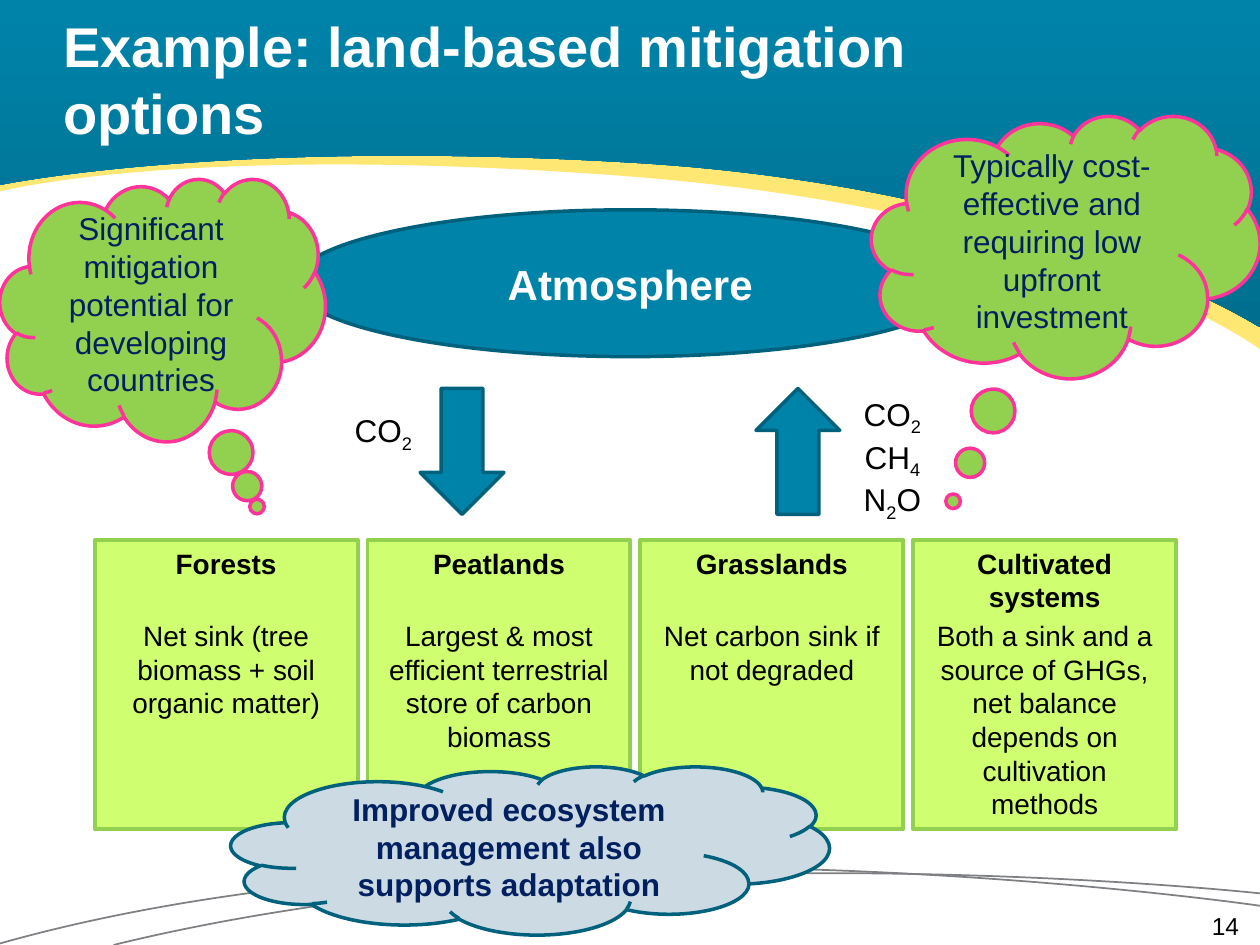
"""Build a slide on land-based mitigation options."""
from lxml import etree
from pptx import Presentation
from pptx.dml.color import RGBColor
from pptx.enum.shapes import MSO_SHAPE
from pptx.enum.text import MSO_ANCHOR, MSO_AUTO_SIZE, PP_ALIGN
from pptx.oxml.ns import qn
from pptx.util import Cm, Pt

RECTANGLE, ELLIPSE = MSO_SHAPE.RECTANGLE, MSO_SHAPE.OVAL
ARROW, CLOUD, CALLOUT = MSO_SHAPE.DOWN_ARROW, MSO_SHAPE.CLOUD, MSO_SHAPE.CLOUD_CALLOUT
TOP, MIDDLE = MSO_ANCHOR.TOP, MSO_ANCHOR.MIDDLE
LEFT, CENTER, RIGHT = PP_ALIGN.LEFT, PP_ALIGN.CENTER, PP_ALIGN.RIGHT
NO_AUTOSIZE = MSO_AUTO_SIZE.NONE

WHITE = RGBColor(0xFF, 0xFF, 0xFF)
BLACK = RGBColor(0x00, 0x00, 0x00)
GRAY = RGBColor(0x7E, 0x80, 0x83)
YELLOW = RGBColor(0xFF, 0xE7, 0x74)
TEAL = RGBColor(0x00, 0x83, 0xA9)
DARK_TEAL = RGBColor(0x00, 0x61, 0x7D)
LIME = RGBColor(0xCF, 0xFF, 0x70)
GREEN = RGBColor(0x92, 0xD0, 0x50)
PINK = RGBColor(0xFF, 0x33, 0x99)
PALE_BLUE = RGBColor(0xCC, 0xDA, 0xE3)
NAVY = RGBColor(0x00, 0x20, 0x60)

SLIDE_WIDTH, SLIDE_HEIGHT = 25.4, 19.05
HEADER_TOP = -0.03


class SlideBuilder:
    """Hold the style and the current slide."""

    font = "Arial"

    def __init__(self, slide):
        self.shapes = slide.shapes

    def frame(self, shape, anchor=TOP, margin=None):
        text_frame = shape.text_frame
        text_frame.word_wrap = True
        text_frame.auto_size = NO_AUTOSIZE
        text_frame.vertical_anchor = anchor
        if margin is not None:
            text_frame.margin_left = text_frame.margin_right = Cm(margin)
            text_frame.margin_top = text_frame.margin_bottom = Cm(margin)
        return text_frame

    def run(self, paragraph, text, size, color, bold=False, subscript=False):
        run = paragraph.add_run()
        run.text = text
        run.font.name = self.font
        run.font.size = Pt(size)
        run.font.bold = bold
        run.font.color.rgb = color
        if subscript:
            run.font._element.set("baseline", "-25000")

    def title(self, lines, left, top, width, height):
        title = self.shapes.title
        title.left, title.top, title.width, title.height = map(Cm, (left, top, width, height))
        paragraph = self.frame(title, MIDDLE, 0).paragraphs[0]
        paragraph.alignment = LEFT
        for index, line in enumerate(lines):
            if index:
                paragraph.add_line_break()
            self.run(paragraph, line, 32, WHITE, True)
        self.shapes._spTree.append(title._element)

    def curve(self, points, curve_count, closed=False):
        start, *others = [(Cm(x), Cm(y)) for x, y in points]
        builder = self.shapes.build_freeform(*start, scale=1.0)
        builder.add_line_segments(others, close=closed)
        shape = builder.convert_to_shape()
        shape.shadow.inherit = False
        lines = list(shape._element.iter(qn("a:lnTo")))
        for index in range(0, 3 * curve_count, 3):
            segment = etree.Element(qn("a:cubicBezTo"))
            lines[index].addprevious(segment)
            for line in lines[index:index + 3]:
                segment.append(line[0])
                line.getparent().remove(line)
        return shape

    def ground_line(self, start, control, end):
        shape = self.curve((start, start, control, end), 1)
        shape.fill.background()
        shape.line.color.rgb = GRAY
        shape.line.width = Pt(1)

    def band(self, right, right_control, middle, left_control, left):
        lower_right, lower_left = (SLIDE_WIDTH, right), (0, left)
        upper_left, upper_right = (0, HEADER_TOP), (SLIDE_WIDTH, HEADER_TOP)
        shape = self.curve(
            (lower_right, lower_right, right_control, middle,
             left_control, lower_left, lower_left, upper_left, upper_right), 2, True)
        shape.line.fill.background()
        return shape

    def shape(self, kind, left, top, width, height, fill, line, line_width=2):
        shape = self.shapes.add_shape(kind, *map(Cm, (left, top, width, height)))
        shape.shadow.inherit = False
        shape.fill.solid()
        shape.fill.fore_color.rgb = fill
        shape.line.color.rgb = line
        shape.line.width = Pt(line_width)
        return shape

    def label(self, shape, text, size, color, bold=False):
        paragraph = self.frame(shape, MIDDLE).paragraphs[0]
        paragraph.alignment = CENTER
        self.run(paragraph, text, size, color, bold)

    def callout(self, text, left, top, width, height, tail):
        shape = self.shape(CALLOUT, left, top, width, height, GREEN, PINK)
        shape.adjustments[0], shape.adjustments[1] = tail
        self.label(shape, text, 18, NAVY)

    def card(self, heading, body, gap, left, top, width, height):
        shape = self.shape(RECTANGLE, left, top, width, height, LIME, GREEN, 2.25)
        text_frame = self.frame(shape)
        first, second = text_frame.paragraphs[0], text_frame.add_paragraph()
        first.alignment = second.alignment = CENTER
        second.space_before = Pt(gap)
        self.run(first, heading, 16, BLACK, True)
        self.run(second, body, 16, BLACK)

    def textbox(self, left, top, width, height, margin=None):
        box = self.shapes.add_textbox(*map(Cm, (left, top, width, height)))
        return self.frame(box, TOP, margin)

    def gases(self, formulas, left, top, width, height):
        text_frame = self.textbox(left, top, width, height)
        for index, formula in enumerate(formulas):
            paragraph = text_frame.add_paragraph() if index else text_frame.paragraphs[0]
            paragraph.alignment = CENTER
            base, digit, rest = formula
            self.run(paragraph, base, 18, BLACK)
            self.run(paragraph, digit, 18, BLACK, subscript=True)
            if rest:
                self.run(paragraph, rest, 18, BLACK)

    def page_number(self, text, left, top, width, height):
        paragraph = self.textbox(left, top, width, height, 0).paragraphs[0]
        paragraph.alignment = RIGHT
        self.run(paragraph, text, 14, BLACK)


def main():
    presentation = Presentation()
    presentation.slide_width, presentation.slide_height = Cm(SLIDE_WIDTH), Cm(SLIDE_HEIGHT)
    builder = SlideBuilder(presentation.slides.add_slide(presentation.slide_layouts[5]))

    builder.ground_line((SLIDE_WIDTH, 18.01), (12.32, 16.59), (2.29, SLIDE_HEIGHT))
    builder.ground_line((SLIDE_WIDTH, 18.26), (10.41, 16.08), (0, 19.02))

    edge = builder.band(7.04, (21.69, 4.27), (12.73, 3.56), (3.73, 2.87), 3.86)
    edge.fill.solid()
    edge.fill.fore_color.rgb = YELLOW
    header = builder.band(6.6, (20.98, 3.76), (12.73, 3.28), (4.45, 2.79), 3.73)
    header.fill.gradient()
    header.fill.gradient_angle = 270
    for position, stop in enumerate(header.fill.gradient_stops):
        stop.color.rgb = TEAL
        stop.position = position
    end_color = list(header._element.iter(qn("a:gs")))[-1][0]
    etree.SubElement(end_color, qn("a:shade")).set("val", "68600")
    builder.title(("Example: land-based mitigation ", "options"), 1.27, 0, 23.7, 3.18)

    cards = (
        ("Forests", "Net sink (tree biomass + soil organic matter)", 22),
        ("Peatlands", "Largest & most efficient terrestrial store of carbon biomass", 22),
        ("Grasslands", "Net carbon sink if not degraded", 22),
        ("Cultivated systems", "Both a sink and a source of GHGs, net balance depends on "
         "cultivation methods", 3),
    )
    for column, (heading, body, gap) in enumerate(cards):
        builder.card(heading, body, gap, 1.91 + 5.5 * column, 10.89, 5.3, 5.83)

    atmosphere = builder.shape(ELLIPSE, 5.93, 4.23, 13.55, 2.96, TEAL, DARK_TEAL)
    builder.label(atmosphere, "Atmosphere", 24, WHITE, True)
    for left, rotation in ((8.47, 0), (15.24, 180)):
        builder.shape(ARROW, left, 7.83, 1.69, 2.54, TEAL, DARK_TEAL).rotation = rotation
    carbon_dioxide = ("CO", "2", "")
    builder.gases((carbon_dioxide,), 6.78, 8.17, 1.9, 1.02)
    builder.gases((carbon_dioxide, ("CH", "4", ""), ("N", "2", "O")),
                  16.72, 7.83, 2.54, 2.56)
    builder.page_number("14", 19.05, 18.36, 5.93, 0.46)

    builder.callout("Significant mitigation potential for developing countries",
                    0, 3.6, 6.56, 5.29, (0.29, 0.75))
    builder.callout("Typically cost-effective and requiring low upfront investment",
                    17.57, 2.33, 7.83, 5.29, (-0.29, 0.97))
    adaptation = builder.shape(CLOUD, 4.66, 15.45, 12.06, 3.39, PALE_BLUE, DARK_TEAL)
    builder.label(adaptation, "Improved ecosystem management also supports adaptation",
                  18, NAVY, True)
    presentation.save("out.pptx")


if __name__ == "__main__":
    main()
